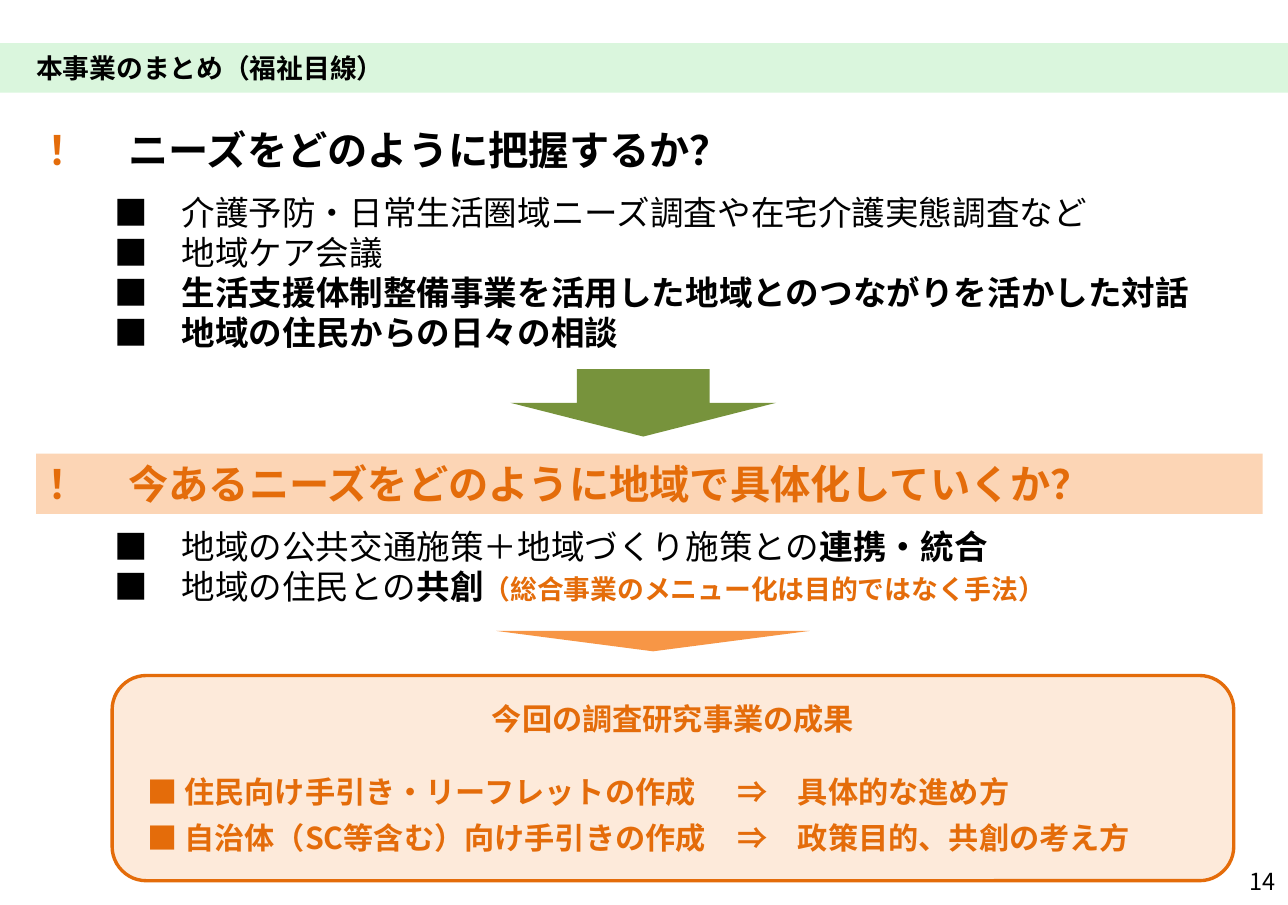
from pptx import Presentation
from pptx.dml.color import RGBColor as Rgb
from pptx.enum.shapes import MSO_SHAPE as Kind
from pptx.enum.text import MSO_ANCHOR as Anchor, MSO_AUTO_SIZE as Fit, PP_ALIGN as Align
from pptx.oxml.ns import qn
from pptx.util import Cm, Pt
from lxml.etree import SubElement as Sub

FONT = "Noto Sans CJK JP"
COLORS = {
    "black": "000000",
    "orange": "E46C0A",
    "peach": "FCD5B5",
    "cream": "FDEADA",
    "amber": "F79646",
    "olive": "77933C",
    "mint": "DAF6DD",
}


class Page:
    def __init__(self, deck):
        self.slide = deck.slides.add_slide(deck.slide_layouts[5])

    def color(self, name):
        return Rgb.from_string(COLORS[name])

    def paint(self, shape, fill):
        shape.fill.solid()
        shape.fill.fore_color.rgb = self.color(fill)

    def label(self, shape, paras, size, color="black", bold=False,
              align=Align.LEFT, anchor=Anchor.TOP):
        frame = shape.text_frame
        frame.word_wrap = True
        frame.auto_size = Fit.NONE
        frame.vertical_anchor = anchor
        for i, runs in enumerate(paras):
            para = frame.add_paragraph() if i else frame.paragraphs[0]
            para.alignment = align
            font = para.font
            font.size, font.bold = Pt(size), bold
            font.color.rgb = self.color(color)
            font.name = FONT
            Sub(font._element, qn("a:ea"), typeface=FONT)
            for text, style in runs:
                run = para.add_run()
                run.text = text
                if "bold" in style:
                    run.font.bold = style["bold"]
                if "color" in style:
                    run.font.color.rgb = self.color(style["color"])
                if "size" in style:
                    run.font.size = Pt(style["size"])
        return frame.paragraphs

    def title(self, text, box, fill):
        shape = self.slide.shapes.title
        shape.left, shape.top, shape.width, shape.height = map(Cm, box)
        self.paint(shape, fill)
        shape.text_frame.margin_left = Cm(0.76)
        self.label(shape, [[(text, {})]], 16, bold=True, anchor=Anchor.MIDDLE)

    def text(self, paras, box, size, **style):
        shape = self.slide.shapes.add_textbox(*map(Cm, box))
        return self.label(shape, paras, size, **style)

    def shape(self, kind, box, fill, line=None):
        shape = self.slide.shapes.add_shape(kind, *map(Cm, box))
        shape.shadow.inherit = False
        self.paint(shape, fill)
        if line:
            shape.line.color.rgb = self.color(line)
            shape.line.width = Pt(2)
        else:
            shape.line.fill.background()
        return shape

    def indent(self, para, first, tab):
        props = para._p.get_or_add_pPr()
        props.set("marL", "0")
        props.set("indent", str(Cm(first)))
        stops = props.makeelement(qn("a:tabLst"))
        Sub(stops, qn("a:tab"), pos=str(Cm(tab)), algn="l")
        props.find(qn("a:defRPr")).addprevious(stops)


def main():
    deck = Presentation()
    deck.slide_width, deck.slide_height = Cm(27.1), Cm(19.05)
    page = Page(deck)
    strong = {"bold": True}
    note = {"bold": True, "color": "orange", "size": 16}

    page.title("本事業のまとめ（福祉目線）", (0, 0.91, 27.1, 1.04), "mint")

    page.text([[("！　", {"color": "orange"}), ("ニーズをどのように把握するか？", {})]],
              (0.76, 2.51, 24.21, 1.27), 24, bold=True)
    page.text([
        [("■　介護予防・日常生活圏域ニーズ調査や在宅介護実態調査など", {})],
        [("■　地域ケア会議", {})],
        [("■　", {}), ("生活支援体制整備事業を活用した地域とのつながりを活かした対話", strong)],
        [("■　", {}), ("地域の住民からの日々の相談", strong)],
    ], (2.16, 3.91, 24, 3.68), 20)
    page.shape(Kind.DOWN_ARROW, (10.74, 7.77, 5.59, 1.42), "olive")

    band = page.shape(Kind.RECTANGLE, (0.76, 9.55, 25.81, 1.27), "peach")
    page.label(band, [[("！　今あるニーズをどのように地域で具体化していくか？", {})]],
               24, color="orange", bold=True)
    page.text([
        [("■　地域の公共交通施策＋地域づくり施策との", {}), ("連携・統合", strong)],
        [("■　地域の住民との", {}), ("共創", strong),
         ("（総合事業のメニュー化は目的ではなく手法）", note)],
    ], (2.16, 10.95, 24, 1.96), 20)
    wedge = page.shape(Kind.ISOSCELES_TRIANGLE, (10.44, 13.28, 6.6, 0.43), "amber")
    wedge.rotation = 180

    result = page.shape(Kind.ROUNDED_RECTANGLE, (2.36, 14.22, 23.6, 4.32),
                        "cream", "orange")
    head, *items = page.label(result, [
        [("今回の調査研究事業の成果", {})],
        [("■ 住民向け手引き・リーフレットの作成\t⇒　具体的な進め方", {})],
        [("■ 自治体（SC等含む）向け手引きの作成\t⇒　政策目的、共創の考え方", {})],
    ], 18, color="orange", bold=True, anchor=Anchor.MIDDLE)
    head.alignment = Align.CENTER
    head.space_after = Pt(22)
    for item in items:
        page.indent(item, 0.28, 12.7)
    items[1].space_before = Pt(6)

    page.text([[("14", {})]], (20.78, 18.03, 6.32, 1.02), 14,
              align=Align.RIGHT, anchor=Anchor.MIDDLE)
    deck.save("out.pptx")


if __name__ == "__main__":
    main()
